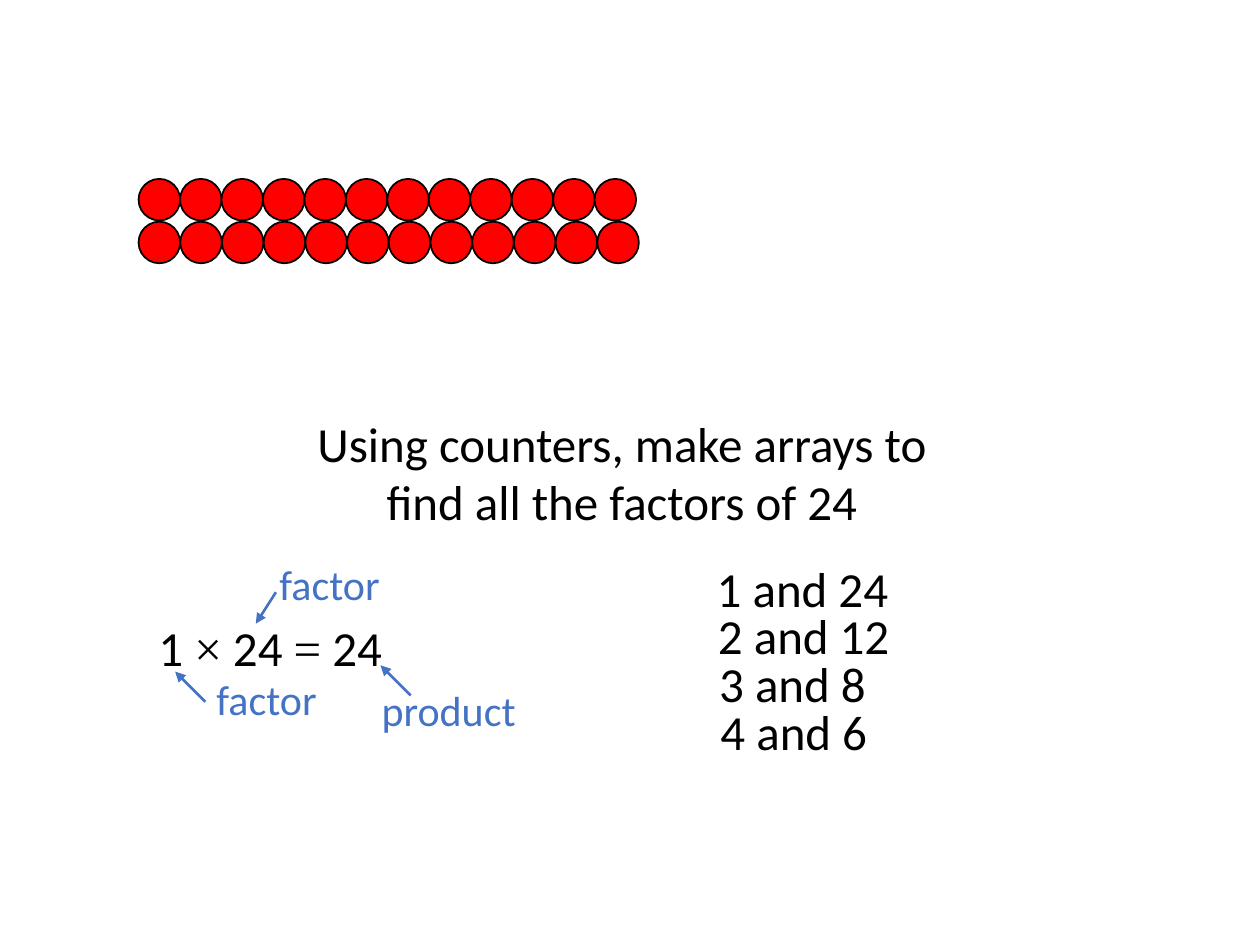
"""Builds a slide on finding the factors of 24 with arrays of counters."""
from dataclasses import dataclass

from lxml.etree import SubElement
from pptx import Presentation
from pptx.dml.color import RGBColor
from pptx.enum.shapes import MSO_CONNECTOR, MSO_SHAPE
from pptx.enum.text import MSO_AUTO_SIZE, PP_ALIGN
from pptx.oxml.ns import qn
from pptx.util import Inches, Pt


@dataclass(frozen=True)
class Theme:
    ink: RGBColor = RGBColor(0x00, 0x00, 0x00)
    accent: RGBColor = RGBColor(0x44, 0x72, 0xC4)
    counter: RGBColor = RGBColor(0xFF, 0x00, 0x00)
    text_font: str = "Calibri"
    symbol_font: str = "Times New Roman"
    body_size: int = 28
    label_size: int = 24
    outline: float = 1
    arrow: float = 1.5


class FactorSlide:
    """Draws on one blank slide, with lengths in grid cells of 0.1 inch."""

    columns, rows, cell = 100, 75, Inches(0.1)

    def __init__(self, presentation, theme):
        presentation.slide_width = self.columns * self.cell
        presentation.slide_height = self.rows * self.cell
        self.theme = theme
        self.slide = presentation.slides.add_slide(presentation.slide_layouts[6])

    def place(self, *cells):
        return [round(count * self.cell) for count in cells]

    def text(self, words, box, size=None, color=None, align=PP_ALIGN.LEFT):
        theme = self.theme
        frame = self.slide.shapes.add_textbox(*self.place(*box)).text_frame
        frame_format = {"word_wrap": True, "auto_size": MSO_AUTO_SIZE.SHAPE_TO_FIT_TEXT}
        for name, value in frame_format.items():
            setattr(frame, name, value)
        paragraph = frame.paragraphs[0]
        paragraph.alignment = align
        for part in [words] if isinstance(words, str) else words:
            run = paragraph.add_run()
            run.text = part
            font_format = {
                "name": theme.symbol_font if part in ("×", "=") else theme.text_font,
                "size": Pt(size or theme.body_size),
            }
            for name, value in font_format.items():
                setattr(run.font, name, value)
            run.font.color.rgb = color or theme.ink

    def label(self, word, box):
        self.text(word, box, self.theme.label_size, self.theme.accent)

    def arrow(self, start, end):
        connector = self.slide.shapes.add_connector(
            MSO_CONNECTOR.STRAIGHT, *self.place(*start, *end))
        connector.line.color.rgb = self.theme.accent
        connector.line.width = Pt(self.theme.arrow)
        SubElement(connector.line._get_or_add_ln(), qn("a:tailEnd"), type="triangle")
        SubElement(connector._element.spPr, qn("a:effectLst"))

    def counter(self, left, top, diameter):
        shape = self.slide.shapes.add_shape(
            MSO_SHAPE.OVAL, *self.place(left, top, diameter, diameter))
        shape.shadow.inherit = False
        shape.fill.solid()
        shape.fill.fore_color.rgb = self.theme.counter
        shape.line.color.rgb = self.theme.ink
        shape.line.width = Pt(self.theme.outline)

    def counter_row(self, left, top, pitch, count=12, diameter=3.3):
        for index in range(count):
            self.counter(left + index * pitch, top, diameter)


def main():
    presentation = Presentation()
    slide = FactorSlide(presentation, Theme())

    slide.text("Using counters, make arrays to find all the factors of 24",
               (21.2, 32.3, 56.3, 10.4), align=PP_ALIGN.CENTER)
    slide.text(["1 ", "×", " 24 ", "=", " 24"], (11.6, 48.5, 22, 5.7))

    labels = [
        ("factor", (16.2, 53, 12.3, 5), (16.3, 55.7), (13.9, 53.3)),
        ("factor", (21.2, 43.8, 12.3, 5), (21.9, 47), (20.3, 49.5)),
        ("product", (29.3, 53.8, 14.6, 5), (32.6, 55.2), (30.2, 52.8)),
    ]
    for word, box, start, end in labels:
        slide.arrow(start, end)
        slide.label(word, box)

    for top, pitch in ((14.2, 3.29), (17.6, 3.31)):
        slide.counter_row(11, top, pitch)

    for index, pair in enumerate(("1 and 24", "2 and 12", "3 and 8", "4 and 6")):
        slide.text(pair, (55.9 + 0.1 * index, 43.8 + 3.8 * index, 16.7, 5.7))

    presentation.save("out.pptx")


if __name__ == "__main__":
    main()
